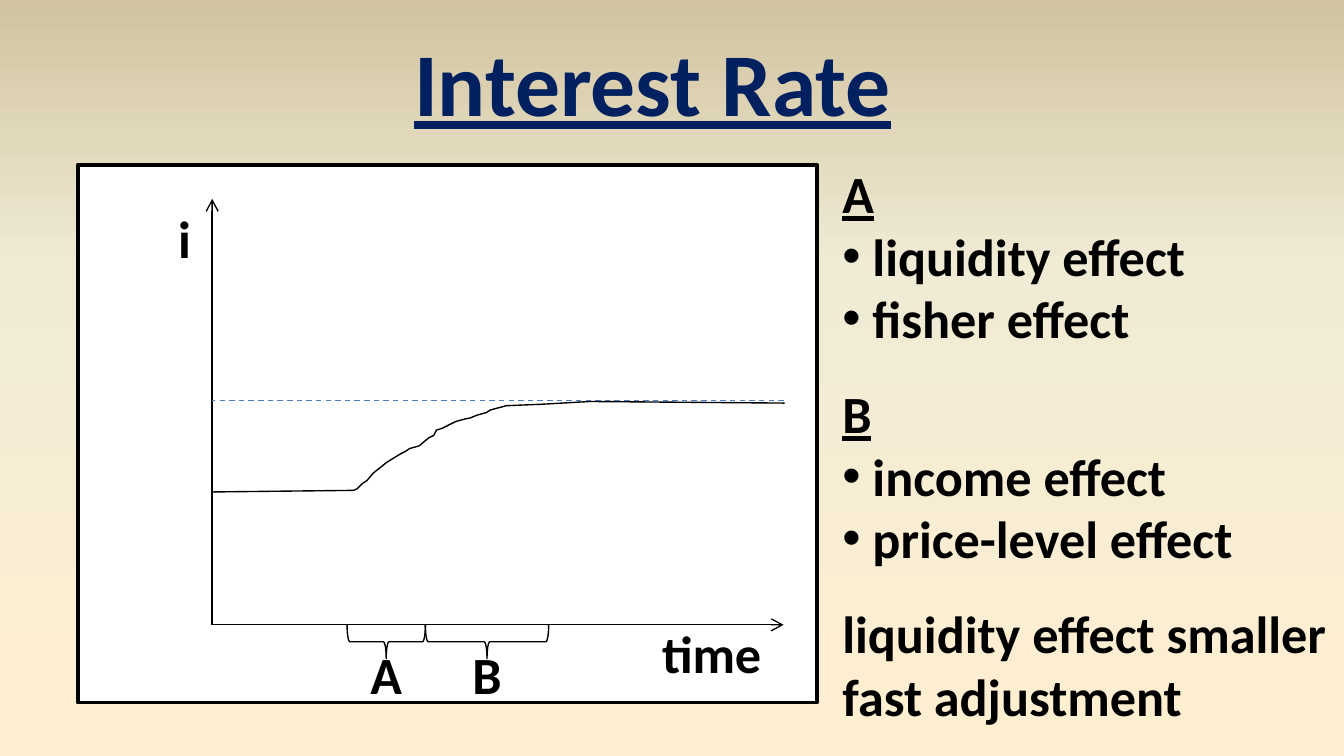
from collections import namedtuple
from copy import deepcopy
from dataclasses import dataclass

from lxml.etree import SubElement
from pptx import Presentation
from pptx.dml.color import RGBColor
from pptx.enum.dml import MSO_LINE_DASH_STYLE as Dash
from pptx.enum.shapes import MSO_CONNECTOR, MSO_SHAPE
from pptx.enum.text import PP_ALIGN
from pptx.oxml.ns import qn
from pptx.util import Cm, Pt

Box = namedtuple("Box", "left top width height")


@dataclass(frozen=True)
class Theme:
    font: str = "Calibri"
    ink: str = "000000"
    title: str = "002060"
    panel: str = "FFFFFF"
    guide: str = "4B7EBC"
    background: tuple = ((0, "FFEFD1"), (0.65, "F0EBD5"), (1, "D1C39F"))
    title_size: int = 48
    body_size: int = 28
    thin: float = 0.75
    thick: float = 2


THEME = Theme()

# Centimetres right of and above the origin of the axes
RATE_CURVE = [
    (0, 2.51), (2.67, 2.54), (2.74, 2.57), (2.84, 2.67), (2.92, 2.72),
    (3.05, 2.87), (3.15, 2.95), (3.3, 3.07), (3.38, 3.12), (3.56, 3.23),
    (3.66, 3.28), (3.73, 3.33), (3.91, 3.38), (4.09, 3.53), (4.19, 3.58),
    (4.24, 3.68), (4.34, 3.71), (4.6, 3.84), (4.78, 3.89), (4.88, 3.91),
    (5, 3.96), (5.18, 4.01), (5.26, 4.06), (5.56, 4.14), (6.27, 4.17),
    (7.14, 4.22), (10.82, 4.19),
]
PERIODS = [("A", 2.55, 4.03), ("B", 4.03, 6.36)]
EFFECTS = [
    ("A", ["liquidity effect", "fisher effect"]),
    ("B", ["income effect", "price-level effect"]),
]
CONCLUSIONS = ["liquidity effect smaller", "fast adjustment"]


def rgb(color):
    return RGBColor.from_string(color)


def set_line(shape, color=THEME.ink, width=THEME.thin):
    shape.line.color.rgb = rgb(color)
    shape.line.width = Pt(width)


def style_text(paragraph, text, size=THEME.body_size, color=THEME.ink, underline=False):
    paragraph.text = text
    font = paragraph.font
    font.name, font.size, font.bold = THEME.font, Pt(size), True
    font.underline = underline
    font.color.rgb = rgb(color)


def add_label(shapes, text, box, **style):
    frame = shapes.add_textbox(*map(Cm, box)).text_frame
    frame.word_wrap = True
    paragraph = frame.paragraphs[0]
    paragraph.alignment = PP_ALIGN.CENTER
    style_text(paragraph, text, **style)


def add_line(shapes, start, end, color=THEME.ink, arrow=False):
    line = shapes.add_connector(MSO_CONNECTOR.STRAIGHT, *map(Cm, start + end))
    set_line(line, color)
    SubElement(line._element.spPr, qn("a:effectLst"))
    if arrow:
        SubElement(line.line._get_or_add_ln(), qn("a:tailEnd"), type="arrow")
    return line


def add_brace(shapes, left, right, top, depth=0.64):
    """Hang a brace under the span from left to right, pointing down."""
    span = right - left
    box = ((left + right - depth) / 2, top + (depth - span) / 2, depth, span)
    brace = shapes.add_shape(MSO_SHAPE.LEFT_BRACE, *map(Cm, box))
    brace.rotation = 270
    brace.shadow.inherit = False
    brace.fill.background()
    set_line(brace)


def set_background(slide):
    fill = slide.background.fill
    fill.gradient()
    fill.gradient_angle = 90
    first = fill.gradient_stops[0]._gs
    first.addnext(deepcopy(first))
    for stop, (position, color) in zip(fill.gradient_stops, THEME.background):
        stop.position = position
        stop.color.rgb = rgb(color)


def add_rate_graph(slide, box):
    shapes = slide.shapes.add_group_shape().shapes
    panel = shapes.add_shape(MSO_SHAPE.RECTANGLE, *map(Cm, box))
    panel.shadow.inherit = False
    panel.fill.solid()
    panel.fill.fore_color.rgb = rgb(THEME.panel)
    set_line(panel, width=THEME.thick)

    x, y = box.left + 2.54, box.top + 8.69
    axis_width, axis_height, target = 10.8, 8.05, 4.24
    add_line(shapes, (x, y), (x, y - axis_height), arrow=True)
    add_line(shapes, (x, y), (x + axis_width, y), arrow=True)
    add_label(shapes, "i", Box(x - 1.47, y - 8.03, 1.9, 1.45))
    add_label(shapes, "time", Box(x + 7.85, y - 0.2, 3.18, 1.45))
    guide = add_line(shapes, (x + axis_width, y - target), (x, y - target), THEME.guide)
    guide.line.dash_style = Dash.DASH

    points = [(Cm(x + right), Cm(y - up)) for right, up in RATE_CURVE]
    builder = shapes.build_freeform(*points[0])
    builder.add_line_segments(points[1:], close=False)
    curve = builder.convert_to_shape()
    curve.shadow.inherit = False
    curve.fill.background()
    set_line(curve)

    for name, start, end in PERIODS:
        add_brace(shapes, x + start, x + end, y)
        add_label(shapes, name, Box(x + (start + end - 1.9) / 2, y + 0.2, 1.9, 1.45))


def add_bullet(paragraph, indent=0.57):
    properties = paragraph._p.get_or_add_pPr()
    properties.set("marL", str(Cm(indent)))
    properties.set("indent", str(-Cm(indent)))
    SubElement(properties, qn("a:buFont"), typeface="Arial")
    SubElement(properties, qn("a:buChar"), char="•")


def add_effects(slide, box):
    frame = slide.shapes.add_textbox(*map(Cm, box)).text_frame
    frame.word_wrap = True

    def add_paragraph(text, gap=0, underline=False):
        first = frame.paragraphs[0]
        paragraph = frame.add_paragraph() if first.text else first
        paragraph.space_before = Pt(gap)
        style_text(paragraph, text, underline=underline)
        return paragraph

    gap = 17
    for index, (heading, effects) in enumerate(EFFECTS):
        add_paragraph(heading, gap if index else 0, underline=True)
        for effect in effects:
            add_bullet(add_paragraph(effect))
    for index, conclusion in enumerate(CONCLUSIONS):
        add_paragraph(conclusion, 0 if index else gap)


def main():
    presentation = Presentation()
    presentation.slide_width, presentation.slide_height = Cm(25.4), Cm(14.29)
    slide = presentation.slides.add_slide(presentation.slide_layouts[6])
    set_background(slide)
    add_rate_graph(slide, Box(1.47, 3.12, 13.97, 10.16))
    add_label(slide.shapes, "Interest Rate", Box(7.52, 0.38, 9.63, 2.31),
              size=THEME.title_size, color=THEME.title, underline=True)
    add_effects(slide, Box(15.67, 2.92, 9.73, 11.02))
    presentation.save("out.pptx")


if __name__ == "__main__":
    main()
